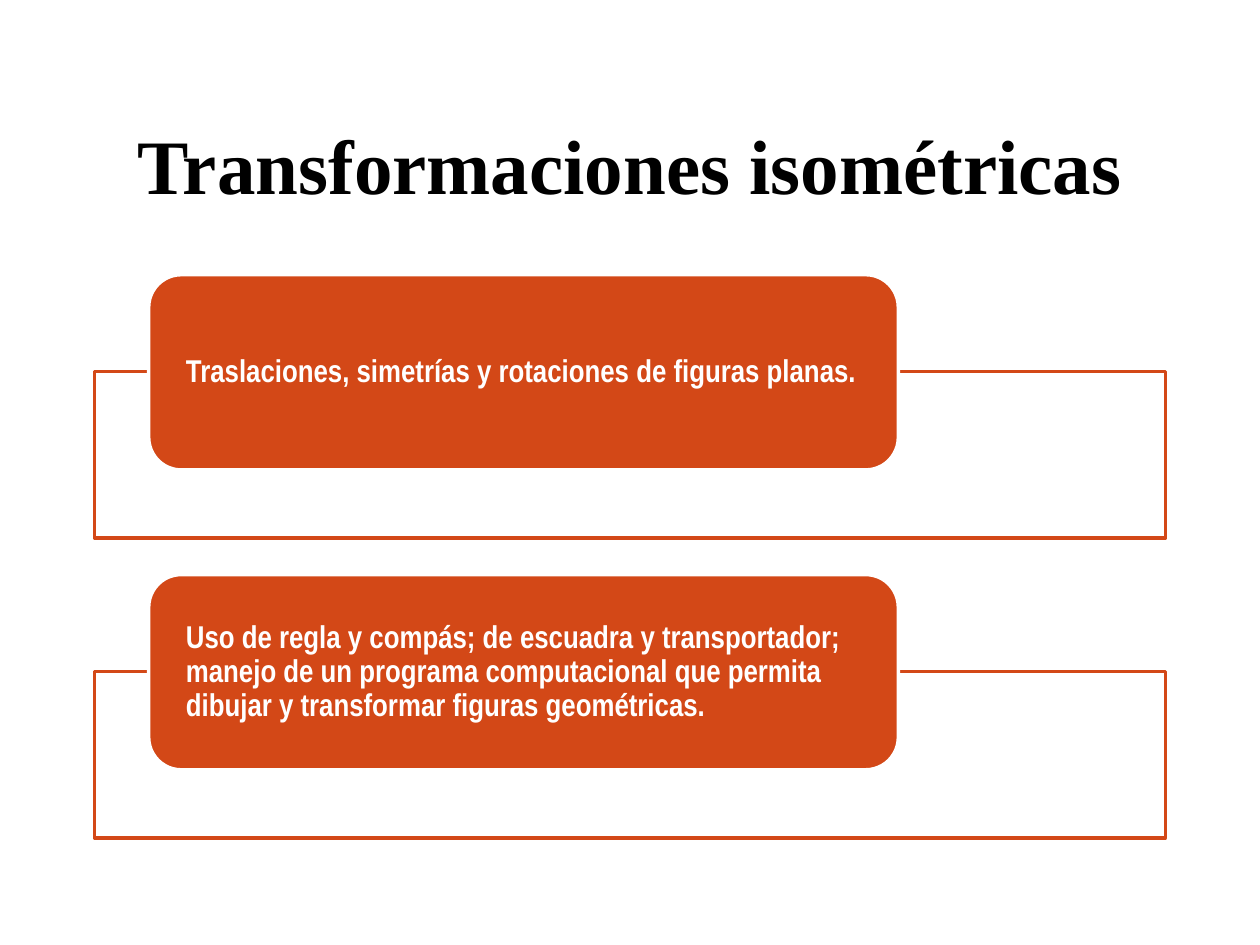
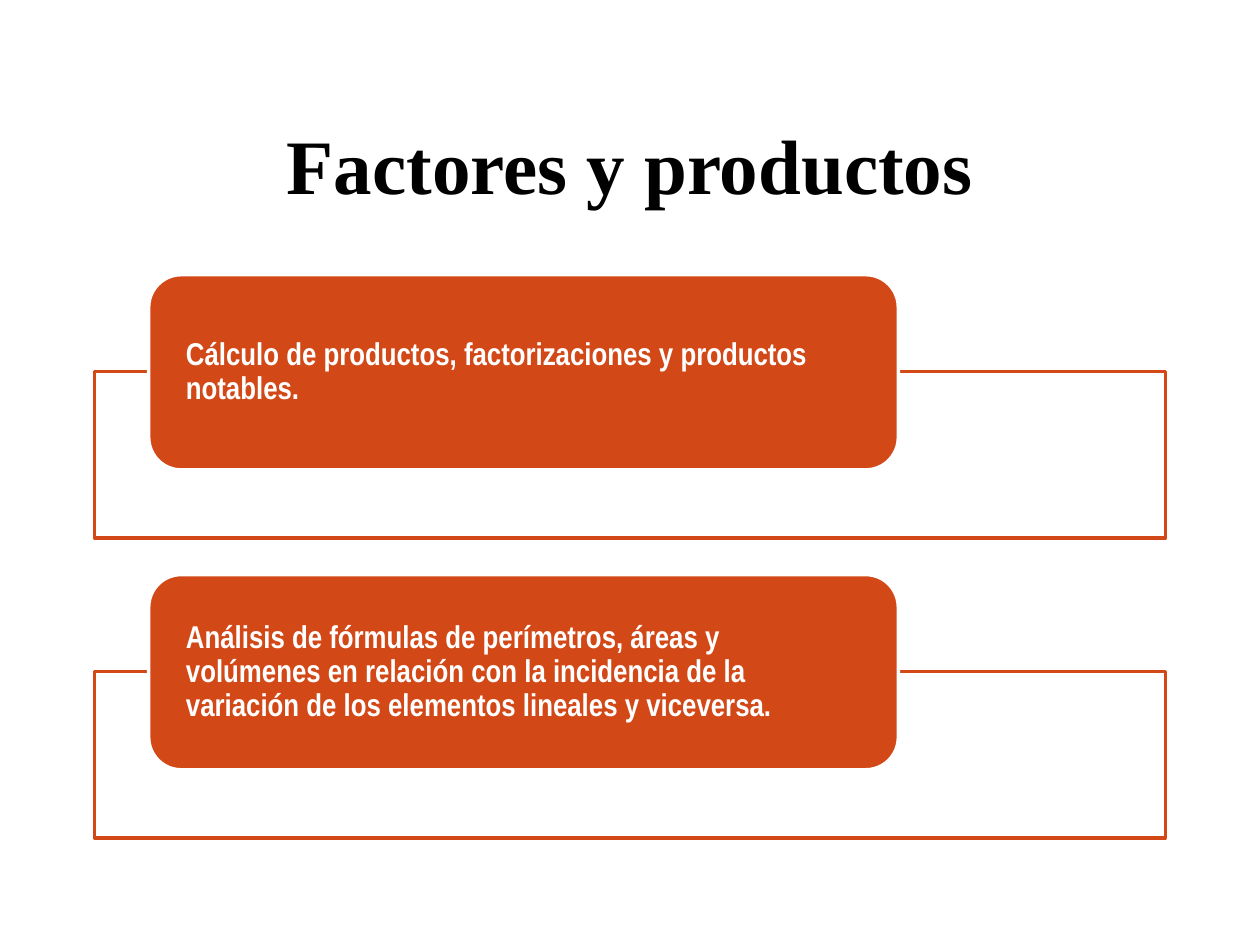
from dataclasses import dataclass
from typing import Any

from lxml.etree import SubElement
from pptx import Presentation
from pptx.dml.color import RGBColor
from pptx.enum.shapes import MSO_SHAPE
from pptx.enum.text import MSO_ANCHOR, PP_ALIGN
from pptx.oxml.ns import qn
from pptx.util import Pt

ORANGE, WHITE, BLACK = "D34817", "FFFFFF", "000000"
FIRST_CARD_TOP = 156.96
TOPIC_PITCH = 171.36
FRAME_DROP = 55.44


@dataclass(frozen=True)
class Area:
    left: float
    top: float
    width: float
    height: float

    def lowered(self, distance: float) -> "Area":
        return Area(self.left, self.top + distance, self.width, self.height)

    def lengths(self) -> tuple[Pt, ...]:
        return tuple(Pt(v) for v in (self.left, self.top, self.width, self.height))


@dataclass(frozen=True)
class Unit:
    title: str
    topics: tuple[str, ...]


@dataclass(frozen=True)
class TextStyle:
    frame: dict[str, Any]
    paragraph: dict[str, Any]
    font: dict[str, Any]
    color: str


TITLE_AREA = Area(54, 48.24, 612, 90)
CARD_AREA = Area(84.96, FIRST_CARD_TOP, 428.4, 111.6)
FRAME_AREA = Area(54, FIRST_CARD_TOP + FRAME_DROP, 612, 95.04)

TITLE_STYLE = TextStyle(
    {"word_wrap": True, "vertical_anchor": MSO_ANCHOR.MIDDLE},
    {"alignment": PP_ALIGN.CENTER},
    {"name": "Times New Roman", "size": Pt(44), "bold": True},
    BLACK,
)
TOPIC_STYLE = TextStyle(
    {"word_wrap": True, "vertical_anchor": MSO_ANCHOR.MIDDLE,
     "margin_left": Pt(15.84), "margin_right": Pt(15.84),
     "margin_top": Pt(0), "margin_bottom": Pt(0)},
    {"alignment": PP_ALIGN.LEFT, "line_spacing": 0.9},
    {"name": "Arial Narrow", "size": Pt(18), "bold": True},
    WHITE,
)

UNITS = (
    Unit("Transformaciones isométricas", (
        "Traslaciones, simetrías y rotaciones de figuras planas.",
        "Uso de regla y compás; de escuadra y transportador; manejo de un programa "
        "computacional que permita dibujar y transformar figuras geométricas.",
    )),
    Unit("Factores y productos", (
        "Cálculo de productos, factorizaciones y productos notables.",
        "Análisis de fórmulas de perímetros, áreas y volúmenes en relación con la "
        "incidencia de la variación de los elementos lineales y viceversa.",
    )),
)


def rgb(color: str) -> RGBColor:
    return RGBColor.from_string(color)


def apply(target: Any, values: dict[str, Any]) -> None:
    for name, value in values.items():
        setattr(target, name, value)


def write(holder: Any, wording: str, style: TextStyle) -> None:
    paragraph = holder.text_frame.paragraphs[0]
    apply(holder.text_frame, style.frame)
    apply(paragraph, style.paragraph)
    run = paragraph.add_run()
    run.text = wording
    apply(run.font, style.font)
    run.font.color.rgb = rgb(style.color)


def add_panel(slide: Any, kind: MSO_SHAPE, area: Area, fill: str, line: str) -> Any:
    panel = slide.shapes.add_shape(kind, *area.lengths())
    panel.shadow.inherit = False
    panel.fill.solid()
    panel.fill.fore_color.rgb = rgb(fill)
    panel.line.color.rgb = rgb(line)
    panel.line.width = Pt(2)
    return panel


def add_topic(slide: Any, position: int, wording: str) -> None:
    drop = position * TOPIC_PITCH
    frame = add_panel(slide, MSO_SHAPE.RECTANGLE, FRAME_AREA.lowered(drop), WHITE, ORANGE)
    frame_color = frame.fill._xPr.find(qn("a:solidFill"))[0]
    SubElement(frame_color, qn("a:alpha"), val="90000")
    card = add_panel(slide, MSO_SHAPE.ROUNDED_RECTANGLE, CARD_AREA.lowered(drop), ORANGE, WHITE)
    write(card, wording, TOPIC_STYLE)


def add_unit(deck: Any, unit: Unit) -> None:
    slide = deck.slides.add_slide(deck.slide_layouts[6])
    slide.background.fill.solid()
    slide.background.fill.fore_color.rgb = rgb(WHITE)
    write(slide.shapes.add_textbox(*TITLE_AREA.lengths()), unit.title, TITLE_STYLE)
    for position, wording in enumerate(unit.topics):
        add_topic(slide, position, wording)


def main() -> None:
    deck = Presentation()
    apply(deck, {"slide_width": Pt(720), "slide_height": Pt(540)})
    for unit in UNITS:
        add_unit(deck, unit)
    deck.save("out.pptx")


if __name__ == "__main__":
    main()
